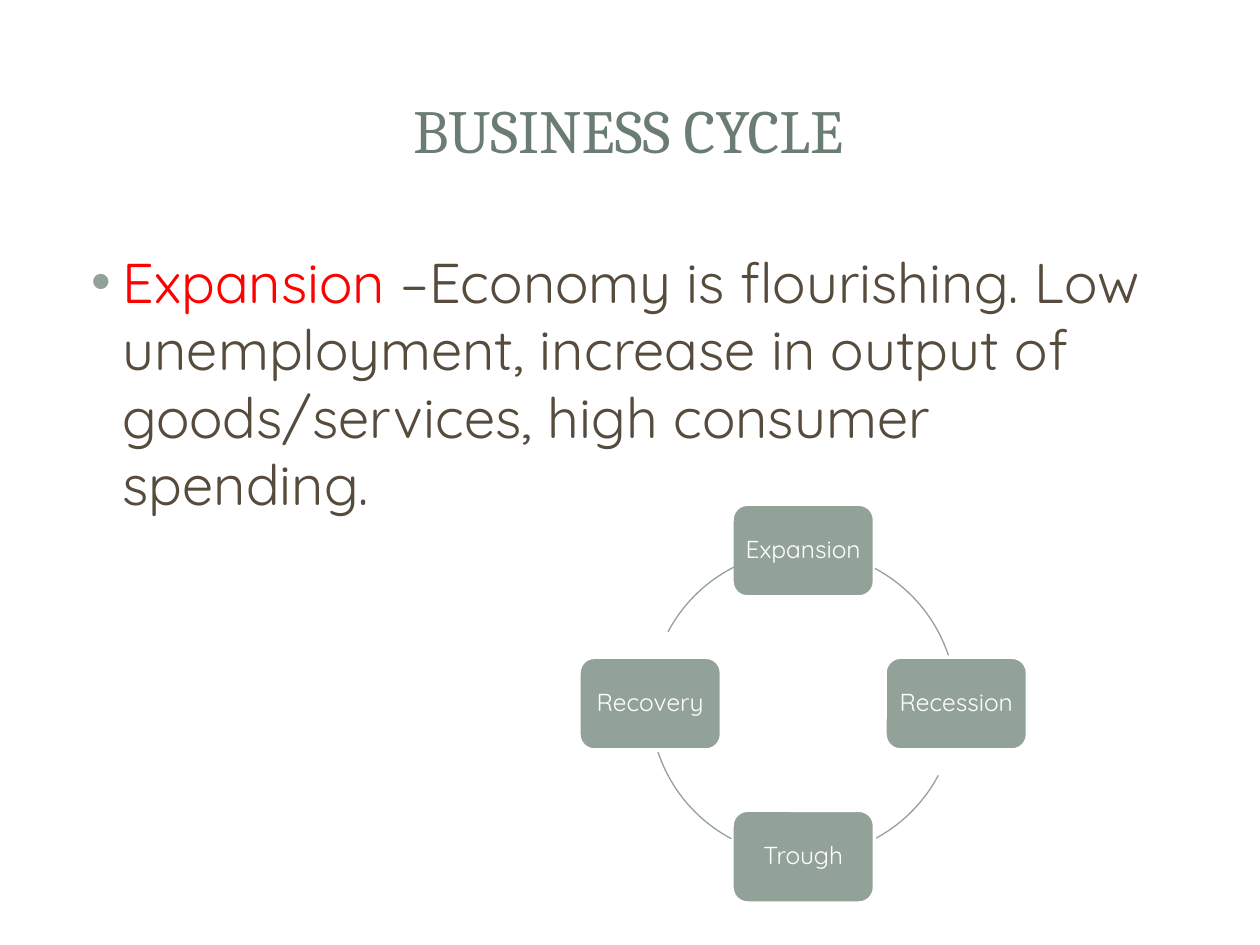
from math import cos, sin, radians
from lxml.etree import SubElement
from pptx import Presentation
from pptx.dml.color import RGBColor
from pptx.enum.shapes import MSO_SHAPE
from pptx.enum.text import MSO_ANCHOR, PP_ALIGN
from pptx.oxml.ns import qn
from pptx.util import Pt

SAGE = RGBColor(0x93, 0xA2, 0x99)
PINE = RGBColor(0x6B, 0x7D, 0x72)
BROWN = RGBColor(0x56, 0x4B, 0x3C)
RED = RGBColor(0xFF, 0, 0)
WHITE = RGBColor(0xFF, 0xFF, 0xFF)
HEAD, BODY = "Cambria", "Quicksand"

TITLE = "BUSINESS CYCLE"
POINT = [
    ("Expansion", RED),
    (" –Economy is flourishing. Low unemployment, increase in output of "
     "goods/services, high consumer spending.", BROWN),
]
STAGES = ["Expansion", "Recession", "Trough", "Recovery"]  # clockwise from top

MID_X, MID_Y, RADIUS = 459, 402.1, 87.45
BOX_W, BOX_H = 81.4, 53
ARC_FROM, ARC_TO = 28, 72  # degrees past each stage


def write(frame, runs, font=BODY, size=14, align=PP_ALIGN.CENTER,
          anchor=MSO_ANCHOR.MIDDLE, pad=None):
    """Fill the frame with one paragraph of (text, colour) runs."""
    frame.word_wrap = True
    frame.vertical_anchor = anchor
    if pad is not None:
        frame.margin_left = frame.margin_right = Pt(pad)
        frame.margin_top = frame.margin_bottom = Pt(pad)
    para = frame.paragraphs[0]
    para.alignment = align
    for text, color in runs:
        run = para.add_run()
        run.text = text
        run.font.name = font
        run.font.size = Pt(size)
        run.font.color.rgb = color
    return para


def add_bullet(para, color, left, hang):
    props = para._p.get_or_add_pPr()
    props.set("marL", str(Pt(left)))
    props.set("indent", str(-Pt(hang)))
    tint = SubElement(props, qn("a:buClr"))
    SubElement(tint, qn("a:srgbClr"), val=str(color))
    SubElement(props, qn("a:buFont"), typeface="Arial")
    SubElement(props, qn("a:buChar"), char="•")


def add_box(shapes, name, turn):
    """Place a stage on the ring at the given angle."""
    x = MID_X + RADIUS * cos(radians(turn)) - BOX_W / 2
    y = MID_Y + RADIUS * sin(radians(turn)) - BOX_H / 2
    box = shapes.add_shape(MSO_SHAPE.ROUNDED_RECTANGLE,
                           Pt(x), Pt(y), Pt(BOX_W), Pt(BOX_H))
    box.shadow.inherit = False
    box.fill.solid()
    box.fill.fore_color.rgb = SAGE
    box.line.color.rgb = WHITE
    box.line.width = Pt(2)
    para = write(box.text_frame, [(name, WHITE)], pad=4)
    para.line_spacing = 0.9


def add_arc(shapes, turn):
    """Draw the part of the ring that follows the stage at this angle."""
    arc = shapes.add_shape(MSO_SHAPE.ARC, Pt(MID_X - RADIUS), Pt(MID_Y - RADIUS),
                           Pt(2 * RADIUS), Pt(2 * RADIUS))
    arc.shadow.inherit = False
    arc.fill.background()
    arc.line.color.rgb = SAGE
    arc.line.width = Pt(0.75)
    for i, step in enumerate((ARC_FROM, ARC_TO)):
        # angles are stored in 1/60000 degree, adjustments in 1/100000
        arc.adjustments[i] = (turn + step) % 360 * 0.6


def main():
    deck = Presentation()
    deck.slide_width, deck.slide_height = Pt(720), Pt(540)
    shapes = deck.slides.add_slide(deck.slide_layouts[6]).shapes

    title = shapes.add_textbox(Pt(34), Pt(32.5), Pt(650), Pt(82))
    write(title.text_frame, [(TITLE, PINE)], font=HEAD, size=35)

    body = shapes.add_textbox(Pt(36), Pt(138), Pt(648), Pt(344))
    para = write(body.text_frame, POINT, size=32, align=PP_ALIGN.LEFT,
                 anchor=MSO_ANCHOR.TOP)
    para.space_before = Pt(6.4)
    add_bullet(para, SAGE, left=27, hang=18)

    for i, name in enumerate(STAGES):
        turn = -90 + i * 360 / len(STAGES)
        add_box(shapes, name, turn)
        add_arc(shapes, turn)

    deck.save("out.pptx")


if __name__ == "__main__":
    main()
